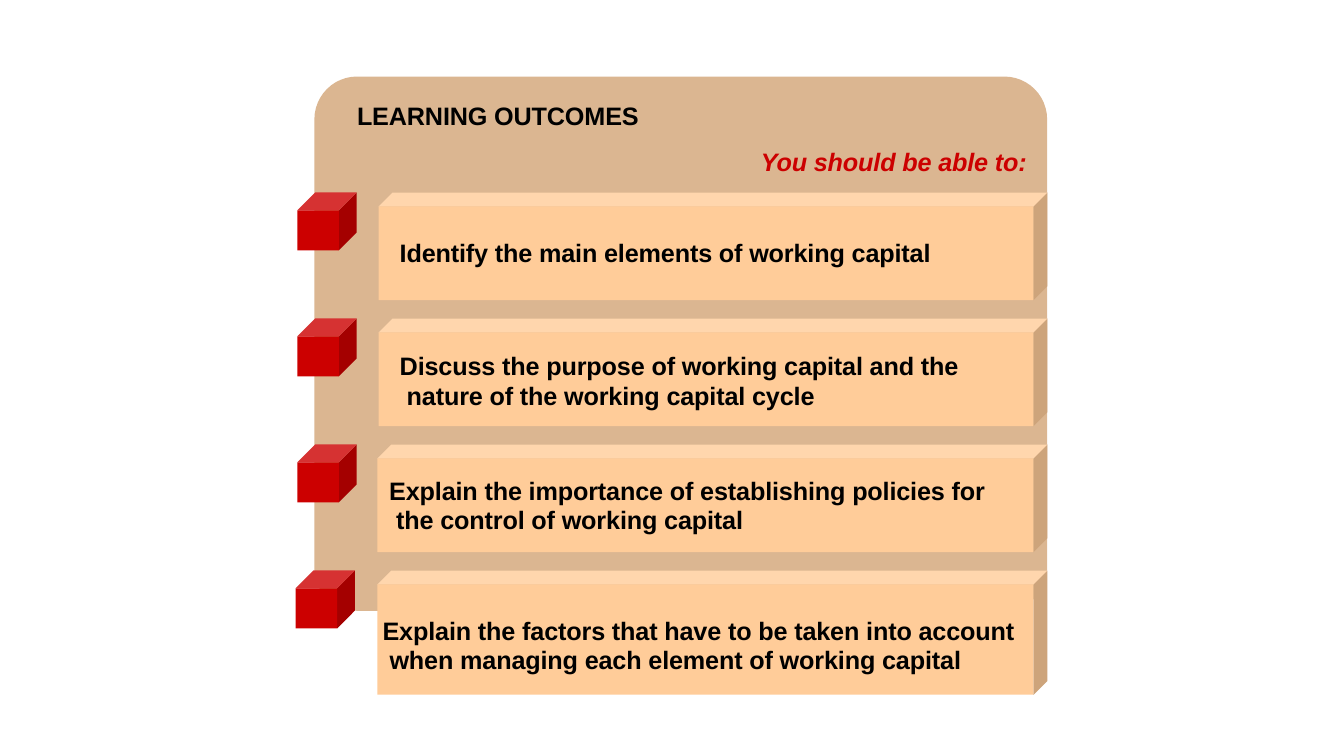
from pptx import Presentation
from pptx.dml.color import RGBColor
from pptx.enum.shapes import MSO_SHAPE
from pptx.enum.text import MSO_ANCHOR, PP_ALIGN
from pptx.util import Pt

RECTANGLE = MSO_SHAPE.RECTANGLE
ROUNDED = MSO_SHAPE.ROUNDED_RECTANGLE
TOP = MSO_ANCHOR.TOP
LEFT = PP_ALIGN.LEFT

COLORS = {
    "panel": "DBB691",
    "text": "000000",
    "accent": "CC0000",
    "bar": {"front": "FFCC99", "side": "CDA47B", "top": "FFD6AD"},
    "cube": {"front": "CC0000", "side": "A40000", "top": "D63232"},
}
FIRST_TOP = 137.5
ROW_PITCH = 90
LINE_PITCH = 21
SPACE_WIDTH = 5

deck = Presentation()
deck.slide_width = Pt(960)
deck.slide_height = Pt(540)
page = deck.slides.add_slide(deck.slide_layouts[6])


def draw_block(left, top, width, height, depth, faces):
    """Draw a solid block from three faces and return the front one."""
    right, bottom = left + width, top + height
    front_right, front_top = right - depth, top + depth
    outlines = {
        "side": [(right, top), (front_right, front_top),
                 (front_right, bottom), (right, bottom - depth)],
        "top": [(right, top), (left + depth, top),
                (left, front_top), (front_right, front_top)],
    }
    shapes = {}
    for name, corners in outlines.items():
        points = [(Pt(x), Pt(y)) for x, y in corners]
        builder = page.shapes.build_freeform(*points[0])
        builder.add_line_segments(points[1:], close=True)
        shapes[name] = builder.convert_to_shape()
    shapes["front"] = page.shapes.add_shape(
        RECTANGLE, Pt(left), Pt(front_top), Pt(width - depth), Pt(height - depth))
    for name, face in shapes.items():
        face.shadow.inherit = False
        face.fill.solid()
        face.fill.fore_color.rgb = RGBColor.from_string(faces[name])
        face.line.fill.background()
    return shapes["front"]


def write_lines(box, lines, color, inset, italic=False):
    """Fill the box with one bold paragraph, broken into the given lines."""
    frame = box.text_frame
    frame.word_wrap = True
    frame.vertical_anchor = TOP
    frame.margin_left = frame.margin_right = frame.margin_bottom = 0
    frame.margin_top = Pt(inset)
    para = frame.paragraphs[0]
    para.alignment = LEFT
    for number, line in enumerate(lines):
        if number:
            para.add_line_break()
        span = para.add_run()
        span.text = line
        span.font.name = "Arial"
        span.font.size = Pt(18)
        span.font.bold = True
        span.font.italic = italic
        span.font.color.rgb = RGBColor.from_string(color)
        span._r.get_or_add_rPr().set("spc", "-10")
    return para


panel = page.shapes.add_shape(ROUNDED, Pt(224.6), Pt(54.7), Pt(523.4), Pt(381.6))
panel.adjustments[0] = 0.08
panel.shadow.inherit = False
panel.fill.solid()
panel.fill.fore_color.rgb = RGBColor.from_string(COLORS["panel"])
panel.line.fill.background()

title = page.shapes.add_textbox(Pt(255), Pt(70.6), Pt(215), Pt(23.8))
write_lines(title, ["LEARNING OUTCOMES"], COLORS["text"], 0.7)
subtitle = page.shapes.add_textbox(Pt(543.5), Pt(103.7), Pt(200), Pt(23.8))
write_lines(subtitle, ["You should be able to:"], COLORS["accent"], 0.7, italic=True)

# bar left, bar height, text indent, text inset, cube left, lines
outcomes = [
    (270.5, 77, 15, 22.5, 212.4,
     ["Identify the main elements of working capital"]),
    (270.5, 77, 15, 13.7, 212.4,
     ["Discuss the purpose of working capital and the",
      "nature of the working capital cycle"]),
    (269.5, 77, 8.5, 12.3, 212.4,
     ["Explain the importance of establishing policies for",
      "the control of working capital"]),
    (269.5, 88.8, 3.8, 22.5, 211.2,
     ["Explain the factors that have to be taken into account",
      "when managing each element of working capital"]),
]
for row, (left, height, indent, inset, cube_left, lines) in enumerate(outcomes):
    top = FIRST_TOP + row * ROW_PITCH
    front = draw_block(left, top, 748.2 - left, height, 10, COLORS["bar"])
    para = write_lines(front, lines, COLORS["text"], inset)
    para.line_spacing = Pt(LINE_PITCH)
    properties = para._p.get_or_add_pPr()
    properties.set("marL", str(Pt(indent + SPACE_WIDTH)))
    properties.set("indent", str(-Pt(SPACE_WIDTH)))
    draw_block(cube_left, top, 42.4, 41.3, 12.7, COLORS["cube"])

deck.save("out.pptx")
